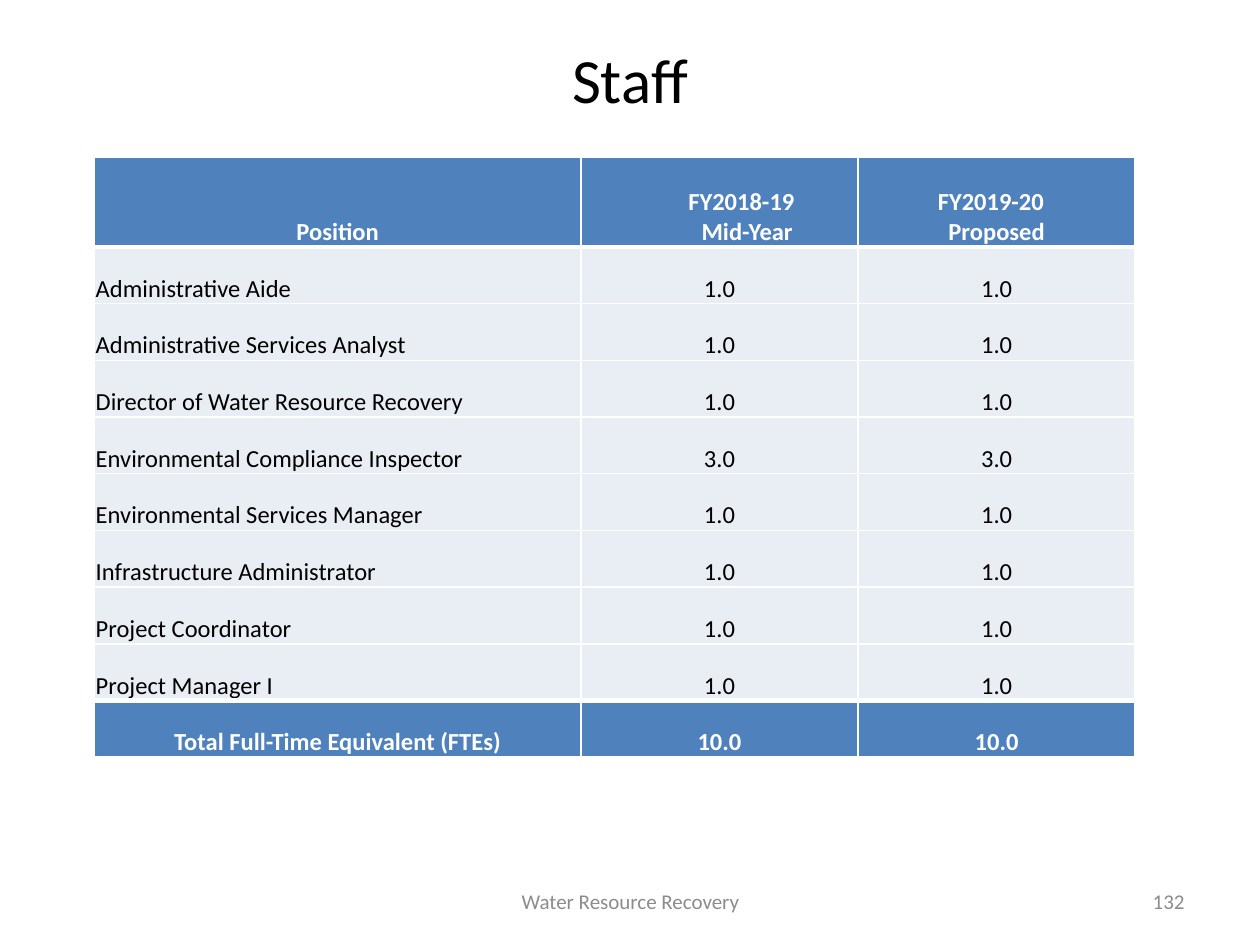
from lxml import etree
from pptx import Presentation
from pptx.dml.color import RGBColor
from pptx.enum.text import MSO_ANCHOR, PP_ALIGN
from pptx.oxml.ns import qn
from pptx.util import Inches, Pt

BLACK = RGBColor(0x00, 0x00, 0x00)
WHITE = RGBColor(0xFF, 0xFF, 0xFF)
BLUE = RGBColor(0x4F, 0x81, 0xBD)
PALE = RGBColor(0xE9, 0xED, 0xF4)
GRAY = RGBColor(0x8C, 0x8C, 0x8C)
FONT = "Calibri"

HEADER = ("Position", "FY2018-19\nMid-Year", "FY2019-20\nProposed")
STAFF = [
    ("Administrative Aide", 1),
    ("Administrative Services Analyst", 1),
    ("Director of Water Resource Recovery", 1),
    ("Environmental Compliance Inspector", 3),
    ("Environmental Services Manager", 1),
    ("Infrastructure Administrator", 1),
    ("Project Coordinator", 1),
    ("Project Manager I", 1),
]
COLUMN_WIDTHS = (3.86, 2.2, 2.2)
HEADER_HEIGHT, ROW_HEIGHT = 0.71, 0.45
# Paragraph margins (left, right) that push the year headings off centre
MID_YEAR_MARGINS = ((0.35, 0), (0.44, 0))
PROPOSED_MARGINS = ((0, 0.09), (0, 0))


def format_text(frame, size, color, align, bold=False):
    for para in frame.paragraphs:
        para.alignment = align
        for span in para.runs:
            span.font.name = FONT
            span.font.size = Pt(size)
            span.font.bold = bold
            span.font.color.rgb = color


def add_title(page, left, top, width, height):
    title = page.shapes.title
    title.left, title.top = Inches(left), Inches(top)
    title.width, title.height = Inches(width), Inches(height)
    title.text_frame.text = "Staff"
    title.text_frame.vertical_anchor = MSO_ANCHOR.MIDDLE
    format_text(title.text_frame, 36, BLACK, PP_ALIGN.CENTER)


def set_borders(cell, top, bottom):
    """Draw white cell borders; the sides are always 1 pt."""
    properties = cell._tc.get_or_add_tcPr()
    widths = {"a:lnL": 1, "a:lnR": 1, "a:lnT": top, "a:lnB": bottom}
    for position, (tag, width) in enumerate(widths.items()):
        line = etree.Element(qn(tag), w=str(Pt(width)))
        fill = etree.SubElement(line, qn("a:solidFill"))
        etree.SubElement(fill, qn("a:srgbClr"), val=str(WHITE))
        properties.insert(position, line)


def set_margins(cell, margins):
    for para, (left, right) in zip(cell.text_frame.paragraphs, margins):
        properties = para._p.get_or_add_pPr()
        properties.set("marL", str(Inches(left)))
        properties.set("marR", str(Inches(right)))


def add_staff_table(page, left, top):
    total = f"{sum(count for _, count in STAFF):.1f}"
    rows = [HEADER]
    rows += [(name, f"{count:.1f}", f"{count:.1f}") for name, count in STAFF]
    rows.append(("Total Full-Time Equivalent (FTEs)", total, total))
    last = len(rows) - 1

    height = HEADER_HEIGHT + ROW_HEIGHT * last
    table = page.shapes.add_table(
        len(rows), len(HEADER), Inches(left), Inches(top),
        Inches(sum(COLUMN_WIDTHS)), Inches(height)).table
    table.horz_banding = False
    table.last_row = True
    for column, width in zip(table.columns, COLUMN_WIDTHS):
        column.width = Inches(width)

    for r, values in enumerate(rows):
        table.rows[r].height = Inches(ROW_HEIGHT if r else HEADER_HEIGHT)
        strong = r in (0, last)
        for c, value in enumerate(values):
            cell = table.cell(r, c)
            cell.text_frame.text = value
            cell.vertical_anchor = MSO_ANCHOR.BOTTOM
            cell.margin_left = cell.margin_right = cell.margin_top = Inches(0.01)
            cell.margin_bottom = 0
            cell.fill.solid()
            cell.fill.fore_color.rgb = BLUE if strong else PALE
            centered = strong or c > 0
            format_text(cell.text_frame, 14, WHITE if strong else BLACK,
                        PP_ALIGN.CENTER if centered else PP_ALIGN.LEFT, strong)
            set_borders(cell, top=3 if r in (1, last) else 1,
                        bottom=3 if r in (0, last - 1) else 1)
    set_margins(table.cell(0, 1), MID_YEAR_MARGINS)
    set_margins(table.cell(0, 2), PROPOSED_MARGINS)


def add_footer_text(page, text, left, width, align):
    box = page.shapes.add_textbox(
        Inches(left), Inches(6.95), Inches(width), Inches(0.4))
    frame = box.text_frame
    frame.word_wrap = True
    frame.vertical_anchor = MSO_ANCHOR.MIDDLE
    frame.text = text
    format_text(frame, 12, GRAY, align)


def main():
    deck = Presentation()
    deck.slide_width, deck.slide_height = Inches(10), Inches(7.5)
    page = deck.slides.add_slide(deck.slide_layouts[5])
    add_title(page, 0.5, 0.25, 9, 0.75)
    add_staff_table(page, 0.75, 1.25)
    add_footer_text(page, "Water Resource Recovery", 3.42, 3.17, PP_ALIGN.CENTER)
    add_footer_text(page, "132", 7.17, 2.33, PP_ALIGN.RIGHT)
    deck.save("out.pptx")


if __name__ == "__main__":
    main()
